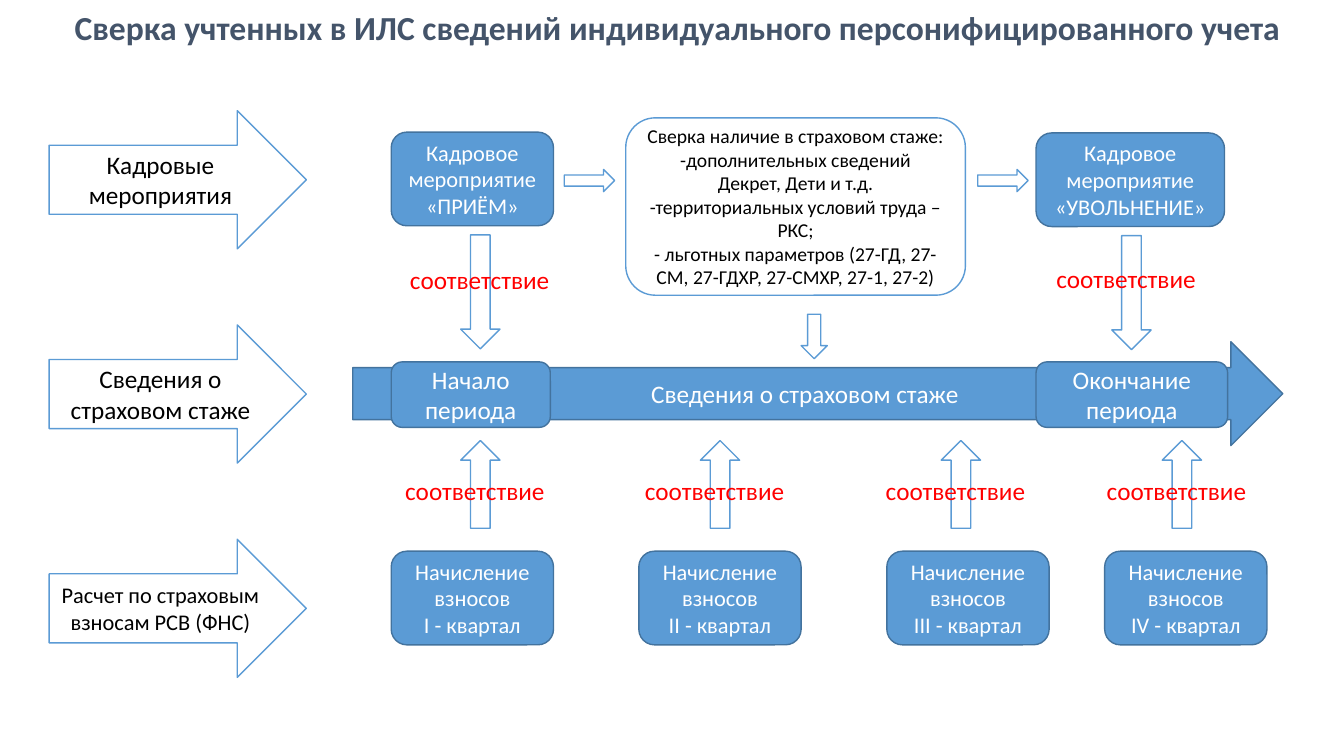
from pptx import Presentation
from pptx.dml.color import RGBColor
from pptx.enum.shapes import MSO_SHAPE
from pptx.enum.text import MSO_ANCHOR, MSO_AUTO_SIZE, PP_ALIGN
from pptx.util import Cm, Pt

RIGHT, DOWN, ROUND = MSO_SHAPE.RIGHT_ARROW, MSO_SHAPE.DOWN_ARROW, MSO_SHAPE.ROUNDED_RECTANGLE
MIDDLE, CENTER, LEFT = MSO_ANCHOR.MIDDLE, PP_ALIGN.CENTER, PP_ALIGN.LEFT
GROW = MSO_AUTO_SIZE.SHAPE_TO_FIT_TEXT

COLORS = {
    "blue": "5B9BD5",
    "edge": "43739E",
    "white": "FFFFFF",
    "black": "000000",
    "red": "FF0000",
    "title": "44546A",
}
SOLID = {"fill": "blue", "line": "edge", "text": "white"}
OUTLINE = {"fill": "white", "line": "blue", "text": "black"}

STAGES = [
    ("Кадровые мероприятия", 18),
    ("Сведения о страховом стаже", 18),
    ("Расчет по страховым взносам РСВ (ФНС)", 16),
]
EVENTS = [
    (9.86, 3.33, 4.09, "«ПРИЁМ»"),
    (26.11, 3.35, 4.75, "«УВОЛЬНЕНИЕ»"),
]
PERIODS = [(9.86, 4.01, "Начало периода"), (26.11, 4.83, "Окончание периода")]
QUARTERS = [
    ("I", 9.86, 11.61),
    ("II", 16.1, 17.65),
    ("III", 22.35, 23.72),
    ("IV", 27.84, 29.29),
]
EVENT_LINKS = [(11.61, 5.92, 10.08, 6.53), (28.02, 5.94, 26.37, 6.5)]
CHECKS = [
    "Сверка наличие в страховом стаже:",
    "-дополнительных сведений",
    "Декрет, Дети и т.д.",
    "-территориальных условий труда – РКС;",
    "- льготных параметров (27-ГД, 27-СМ, 27-ГДХР, 27-СМХР, 27-1, 27-2)",
]


def color(name):
    return RGBColor.from_string(COLORS[name])


def write(frame, lines, size, ink, align=CENTER, bold=False):
    font_format = {"name": "Calibri", "size": Pt(size), "bold": bold}
    for index, line in enumerate(lines):
        para = frame.paragraphs[0] if index == 0 else frame.add_paragraph()
        para.alignment = align
        span = para.add_run()
        span.text = line
        for key, value in font_format.items():
            setattr(span.font, key, value)
        span.font.color.rgb = color(ink)


def add_block(page, kind, place, style, lines=(), size=16, rotation=0):
    block = page.shapes.add_shape(kind, *map(Cm, place))
    block.shadow.inherit = False
    block.rotation = rotation
    block.fill.solid()
    block.fill.fore_color.rgb = color(style["fill"])
    block.line.color.rgb = color(style["line"])
    block.line.width = Pt(1)
    block.text_frame.word_wrap = True
    block.text_frame.vertical_anchor = MIDDLE
    write(block.text_frame, lines, size, style["text"])


def add_match_label(page, left, top):
    box = page.shapes.add_textbox(Cm(left), Cm(top), Cm(4.06), Cm(1.02))
    box.text_frame.word_wrap = False
    box.text_frame.auto_size = GROW
    write(box.text_frame, ["соответствие"], 18, "red", LEFT)


def add_title(page, title):
    box = page.shapes.add_textbox(Cm(1.35), Cm(0), Cm(31.45), Cm(1.19))
    frame_format = {
        "word_wrap": True,
        "auto_size": GROW,
        "margin_left": 0,
        "margin_top": Cm(0.18),
        "margin_right": 0,
        "margin_bottom": 0,
    }
    for key, value in frame_format.items():
        setattr(box.text_frame, key, value)
    write(box.text_frame, [title], 24, "title", bold=True)


def add_timeline(page):
    add_block(page, RIGHT, (8.89, 8.61, 23.44, 2.62), SOLID, ["Сведения о страховом стаже"], 18)
    for left, width, name in PERIODS:
        add_block(page, ROUND, (left, 9.12, width, 1.65), SOLID, [name], 18)


def add_stages(page):
    for row, (name, size) in enumerate(STAGES):
        add_block(page, RIGHT, (1.24, 2.79 + 5.4 * row, 6.48, 3.48), OUTLINE, [name], size)


def add_events(page):
    for left, top, width, name in EVENTS:
        add_block(page, ROUND, (left, top, width, 2.36), SOLID, ["Кадровое мероприятие", name])
    for left, top, label_left, label_top in EVENT_LINKS:
        add_block(page, DOWN, (left, top, 0.99, 2.87), OUTLINE)
        add_match_label(page, label_left, label_top)


def add_quarters(page):
    for number, left, arrow_left in QUARTERS:
        lines = ["Начисление взносов", f"{number} - квартал"]
        add_block(page, ROUND, (left, 13.89, 4.09, 2.36), SOLID, lines)
        add_block(page, DOWN, (arrow_left, 11.1, 0.99, 2.21), OUTLINE, rotation=180)
        add_match_label(page, arrow_left - 1.65, 11.86)


def add_checks(page):
    add_block(page, ROUND, (15.77, 2.97, 8.56, 4.47), OUTLINE, CHECKS, 14)
    for left in (14.22, 24.64):
        add_block(page, RIGHT, (left, 4.27, 1.27, 0.56), OUTLINE)
    add_block(page, DOWN, (20.19, 7.92, 0.66, 1.12), OUTLINE)


def main():
    deck = Presentation()
    deck.slide_width, deck.slide_height = Cm(33.87), Cm(19.05)
    page = deck.slides.add_slide(deck.slide_layouts[6])
    add_timeline(page)
    add_stages(page)
    add_events(page)
    add_quarters(page)
    add_title(page, "Сверка учтенных в ИЛС сведений индивидуального персонифицированного учета")
    add_checks(page)
    deck.save("out.pptx")


if __name__ == "__main__":
    main()
